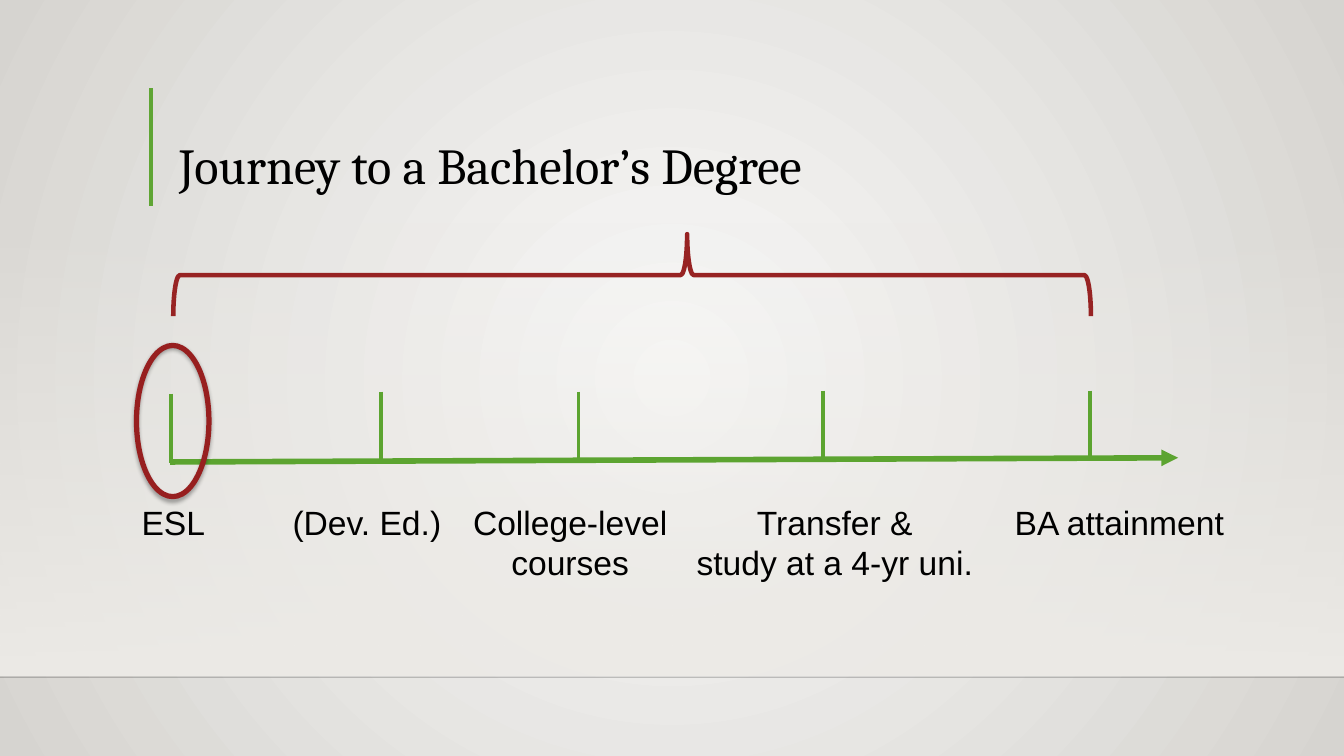
"""Build a timeline slide on the journey to a bachelor's degree."""
from lxml import etree
from pptx import Presentation
from pptx.dml.color import RGBColor
from pptx.enum import shapes as kinds, text as txt
from pptx.oxml import ns
from pptx.util import Pt

SCALE = 9525
WIDE, HIGH = 1280, 720
BLACK = RGBColor(0, 0, 0)
RULE = RGBColor(0, 0, 1)
GREEN = RGBColor(0x5C, 0xA4, 0x30)
LEAF = RGBColor(0x5F, 0xA5, 0x34)
RED = RGBColor(0x97, 0x1F, 0x1F)
BRICK = RGBColor(0x97, 0x23, 0x23)
CREAM = RGBColor(0xED, 0xEB, 0xE7)
PALE = RGBColor(0xF9, 0xF9, 0xF8)
STONE = RGBColor(0xD6, 0xD4, 0xD0)

TICKS = [(163, 375), (363, 373), (551, 373), (784, 372), (1038, 372)]
RISE = 66
LABELS = [
    (101, 128, ["ESL"]),
    (253, 193, ["(Dev. Ed.)"]),
    (387, 312, ["College-level courses"]),
    (639, 312, ["Transfer &", "study at a 4-yr uni."]),
    (910, 312, ["BA attainment"]),
]


def px(*nums):
    """Turn px lengths into EMU."""
    return [n * SCALE for n in nums]


def sub(node, tag, **attrs):
    """Add a drawing element with attributes below a node."""
    child = etree.SubElement(node, ns.qn("a:" + tag))
    for key, val in attrs.items():
        child.set(key, str(val))
    return child


def tint(node, color, alpha=100):
    """Add a colour with an opacity in percent."""
    sub(sub(node, "srgbClr", val=color), "alpha", val=alpha * 1000)


def blend(fill, grad, stops, round_=False):
    """Set a gradient of (position, colour, opacity) stops."""
    fill.gradient()
    node = next(grad.iter(ns.qn("a:gradFill")))
    for child in list(node):
        node.remove(child)
    row = sub(node, "gsLst")
    for pos, color, alpha in stops:
        tint(sub(row, "gs", pos=pos * 1000), color, alpha)
    if round_:
        mid = dict.fromkeys("ltrb", 50000)
        sub(sub(node, "path", path="circle"), "fillToRect", **mid)
    else:
        sub(node, "lin", ang=5400000, scaled=0)


def line(slide, ends, color, size, alpha=100, arrow=False):
    """Draw a straight line, with an arrowhead if asked."""
    link = slide.shapes.add_connector(kinds.MSO_CONNECTOR.STRAIGHT, *px(*ends))
    link.line.width = Pt(size)
    link.line.color.rgb = color
    props = link.line._get_or_add_ln()
    if alpha < 100:
        sub(next(props.iter(ns.qn("a:srgbClr"))), "alpha", val=alpha * 1000)
    if arrow:
        sub(props, "tailEnd", type="triangle")
    sub(link._element.spPr, "effectLst")


def shape(slide, kind, box, color=None, size=0):
    """Draw an unfilled shape with an optional outline."""
    item = slide.shapes.add_shape(kind, *px(*box))
    item.shadow.inherit = False
    item.fill.background()
    if color is None:
        item.line.fill.background()
    else:
        item.line.color.rgb = color
        item.line.width = Pt(size)
    return item


def write(para, words, font, size):
    """Add one run of black text to a paragraph."""
    run = para.add_run()
    run.text = words
    run.font.name, run.font.size = font, Pt(size)
    run.font.color.rgb = BLACK


def label(slide, left, wide, rows):
    """Place a centred label under the timeline."""
    box = slide.shapes.add_textbox(*px(left, 473, wide, 48))
    frame = box.text_frame
    frame.word_wrap = True
    frame.auto_size = txt.MSO_AUTO_SIZE.SHAPE_TO_FIT_TEXT
    for i, words in enumerate(rows):
        para = frame.add_paragraph() if i else frame.paragraphs[0]
        para.alignment = txt.PP_ALIGN.CENTER
        write(para, words, "Arial", 24)


def title(slide, words):
    """Fill and place the title."""
    head = slide.shapes.title
    head.left, head.top, head.width, head.height = px(161, 84, 999, 112)
    frame = head.text_frame
    frame.word_wrap = True
    frame.vertical_anchor = txt.MSO_ANCHOR.BOTTOM
    frame.margin_left = frame.margin_right = Pt(7.2)
    frame.margin_top = frame.margin_bottom = Pt(7.2)
    para = frame.paragraphs[0]
    para.alignment = txt.PP_ALIGN.LEFT
    para.line_spacing = 0.9
    write(para, words, "Cambria", 36)


def scene(slide):
    """Draw the backdrop, the floor line and the title bar."""
    back = slide.background.fill
    blend(back, slide._element, [(0, PALE, 100), (100, STONE, 100)], True)
    band = shape(slide, kinds.MSO_SHAPE.RECTANGLE, (0, 211, WIDE, 432))
    blend(band.fill, band._element, [(0, CREAM, 0), (100, CREAM, 100)])
    line(slide, (0, 645, WIDE, 645), RULE, 1, alpha=20)
    line(slide, (144, 84, 144, 196), LEAF, 3)


def marks(slide):
    """Circle the first step and brace the whole span."""
    ring = shape(slide, kinds.MSO_SHAPE.OVAL, (130, 329, 69, 144), RED, 3.75)
    glow = ring._element.spPr.find(ns.qn("a:effectLst"))
    shade = sub(glow, "outerShdw", blurRad=Pt(3.1), dist=Pt(1.8),
                dir=5400000, rotWithShape=0)
    tint(shade, BLACK, 35)
    box = (563, -175, 78, 874)
    brace = shape(slide, kinds.MSO_SHAPE.RIGHT_BRACE, box, BRICK, 3.25)
    brace.rotation = 270
    brace.adjustments[0] = 0.08
    brace.adjustments[1] = 0.56


def main():
    """Build and save the slide."""
    deck = Presentation()
    deck.slide_width, deck.slide_height = px(WIDE, HIGH)
    slide = deck.slides.add_slide(deck.slide_layouts[5])
    scene(slide)
    title(slide, "Journey to a Bachelor’s Degree")
    line(slide, (162, 440, 1122, 436), GREEN, 4, arrow=True)
    for x, top in TICKS:
        line(slide, (x, top, x, top + RISE), GREEN, 2.75)
    for left, wide, rows in LABELS:
        label(slide, left, wide, rows)
    marks(slide)
    deck.save("out.pptx")


if __name__ == "__main__":
    main()
